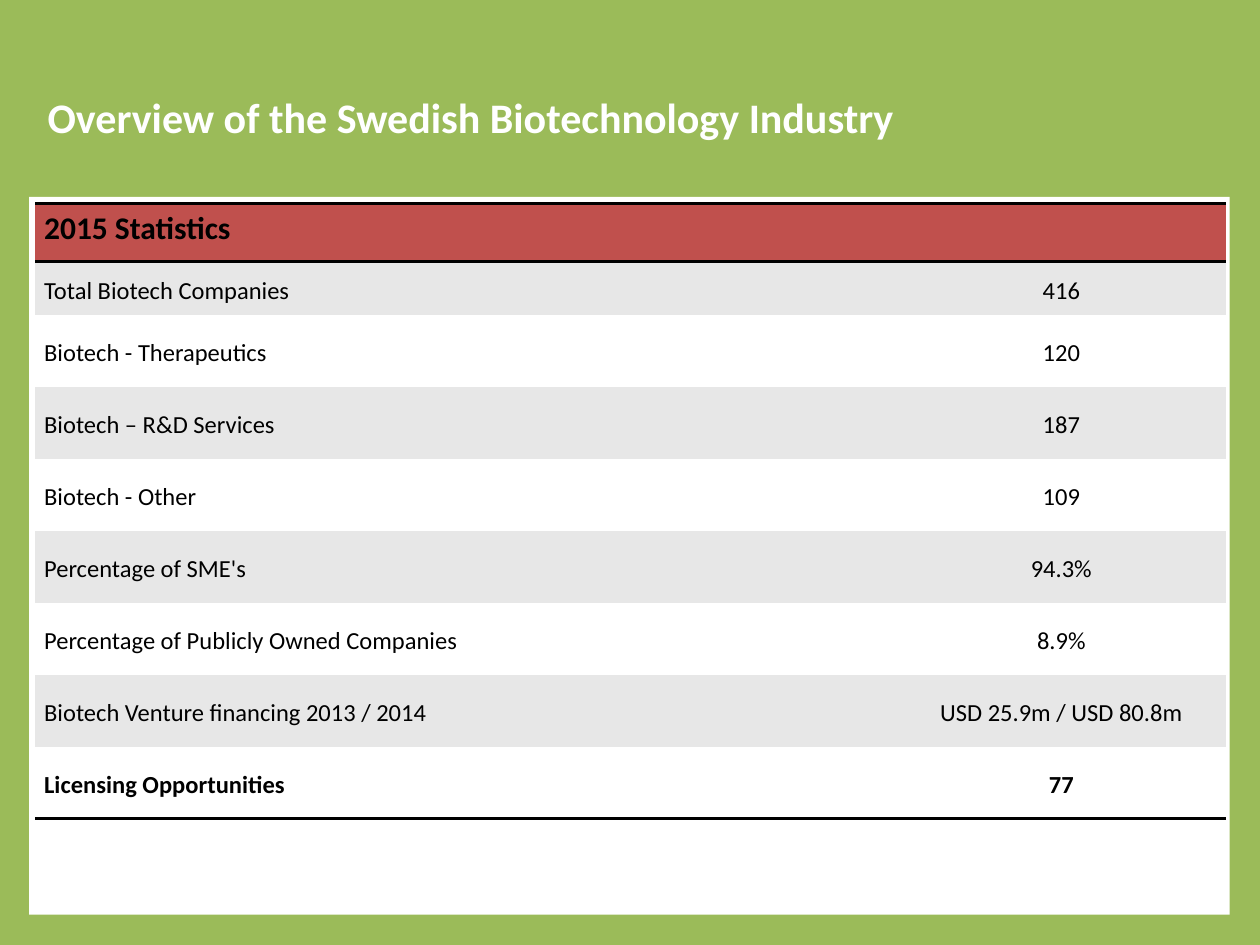
from dataclasses import dataclass

from lxml.etree import SubElement
from pptx import Presentation
from pptx.dml.color import RGBColor
from pptx.enum.shapes import MSO_SHAPE as Shape
from pptx.enum.text import MSO_ANCHOR as Anchor, PP_ALIGN as Align
from pptx.oxml.ns import qn
from pptx.slide import Slide
from pptx.table import _Cell as Cell
from pptx.text.text import TextFrame
from pptx.util import Cm, Length, Pt


@dataclass(frozen=True)
class Theme:
    font: str = "Calibri"
    background: str = "9BBB59"
    panel: str = "FFFFFF"
    heading: str = "C0504D"
    band: str = "E7E7E7"
    title_text: str = "FFFFFF"
    text: str = "000000"
    title_size: Length = Pt(24)
    heading_size: Length = Pt(18)
    body_size: Length = Pt(14)
    rule_width: Length = Pt(2)


@dataclass(frozen=True)
class Statistic:
    label: str
    value: str
    bold: bool = False
    height: Length = Cm(1.45)


THEME = Theme()
NO_TABLE_STYLE = "{2D5ABB26-0587-4C30-8999-92F81FD0307C}"
HEADING_HEIGHT = Cm(1.17)
COLUMN_WIDTHS = (Cm(17.37), Cm(6.63))
STATISTICS = (
    Statistic("Total Biotech Companies", "416", height=Cm(1.07)),
    Statistic("Biotech - Therapeutics", "120"),
    Statistic("Biotech – R&D Services", "187"),
    Statistic("Biotech - Other", "109"),
    Statistic("Percentage of SME's", "94.3%"),
    Statistic("Percentage of Publicly Owned Companies", "8.9%"),
    Statistic("Biotech Venture financing 2013 / 2014", "USD 25.9m / USD 80.8m"),
    Statistic("Licensing Opportunities", "77", bold=True),
)


def write_text(frame: TextFrame, text: str, *, size: Length = THEME.body_size,
               color: str = THEME.text, bold: bool = False,
               align: Align = Align.LEFT, line_spacing: float = 1.0) -> None:
    paragraph = frame.paragraphs[0]
    paragraph.alignment = align
    paragraph.line_spacing = line_spacing
    run = paragraph.add_run()
    run.text = text
    run.font.name = THEME.font
    run.font.size = size
    run.font.bold = bold
    run.font.color.rgb = RGBColor.from_string(color)


def add_rule(cell: Cell, edge: str) -> None:
    properties = cell._tc.get_or_add_tcPr()
    line = SubElement(properties, qn(f"a:ln{edge}"), w=str(THEME.rule_width))
    fill = SubElement(line, qn("a:solidFill"))
    SubElement(fill, qn("a:srgbClr"), val=THEME.text)


def format_cell(cell: Cell, text: str, fill: str, *, rules: str = "",
                anchor: Anchor = Anchor.MIDDLE, **text_format) -> None:
    for edge in rules:
        add_rule(cell, edge)
    cell.fill.solid()
    cell.fill.fore_color.rgb = RGBColor.from_string(fill)
    cell.margin_left = cell.margin_right = Cm(0.18)
    cell.margin_top = cell.margin_bottom = 0
    cell.vertical_anchor = anchor
    write_text(cell.text_frame, text, line_spacing=1.15, **text_format)


def add_panel(slide: Slide) -> None:
    panel = slide.shapes.add_shape(Shape.RECTANGLE, Cm(0.59), Cm(3.97), Cm(24.2), Cm(14.47))
    panel.shadow.inherit = False
    panel.fill.solid()
    panel.fill.fore_color.rgb = RGBColor.from_string(THEME.panel)
    panel.line.fill.background()


def add_title(slide: Slide, text: str) -> None:
    title = slide.shapes.add_textbox(Cm(0.71), Cm(0.76), Cm(22.86), Cm(3.18))
    title.text_frame.word_wrap = True
    title.text_frame.vertical_anchor = Anchor.MIDDLE
    write_text(title.text_frame, text, size=THEME.title_size,
               color=THEME.title_text, bold=True)


def add_statistics(slide: Slide, heading: str, statistics: tuple[Statistic, ...]) -> None:
    heights = [HEADING_HEIGHT] + [statistic.height for statistic in statistics]
    shape = slide.shapes.add_table(len(heights), len(COLUMN_WIDTHS), Cm(0.71), Cm(4.11),
                                   sum(COLUMN_WIDTHS), sum(heights))
    table = shape.table
    table.first_row = table.horz_banding = False
    shape.element.find(".//" + qn("a:tableStyleId")).text = NO_TABLE_STYLE
    for column, width in zip(table.columns, COLUMN_WIDTHS):
        column.width = width
    for row, height in zip(table.rows, heights):
        row.height = height

    table.cell(0, 0).merge(table.cell(0, 1))
    format_cell(table.cell(0, 0), heading, THEME.heading, rules="TB",
                anchor=Anchor.TOP, size=THEME.heading_size, bold=True)
    for index, statistic in enumerate(statistics, start=1):
        fill = THEME.band if index % 2 else THEME.panel
        rules = "B" if index == len(statistics) else ""
        columns = ((statistic.label, Align.LEFT), (statistic.value, Align.CENTER))
        for column, (text, align) in enumerate(columns):
            format_cell(table.cell(index, column), text, fill, rules=rules,
                        bold=statistic.bold, align=align)


def main() -> None:
    presentation = Presentation()
    presentation.slide_width = Cm(25.4)
    presentation.slide_height = Cm(19.05)
    slide = presentation.slides.add_slide(presentation.slide_layouts[6])
    slide.background.fill.solid()
    slide.background.fill.fore_color.rgb = RGBColor.from_string(THEME.background)
    add_panel(slide)
    add_title(slide, "Overview of the Swedish Biotechnology Industry")
    add_statistics(slide, "2015 Statistics", STATISTICS)
    presentation.save("out.pptx")


if __name__ == "__main__":
    main()
